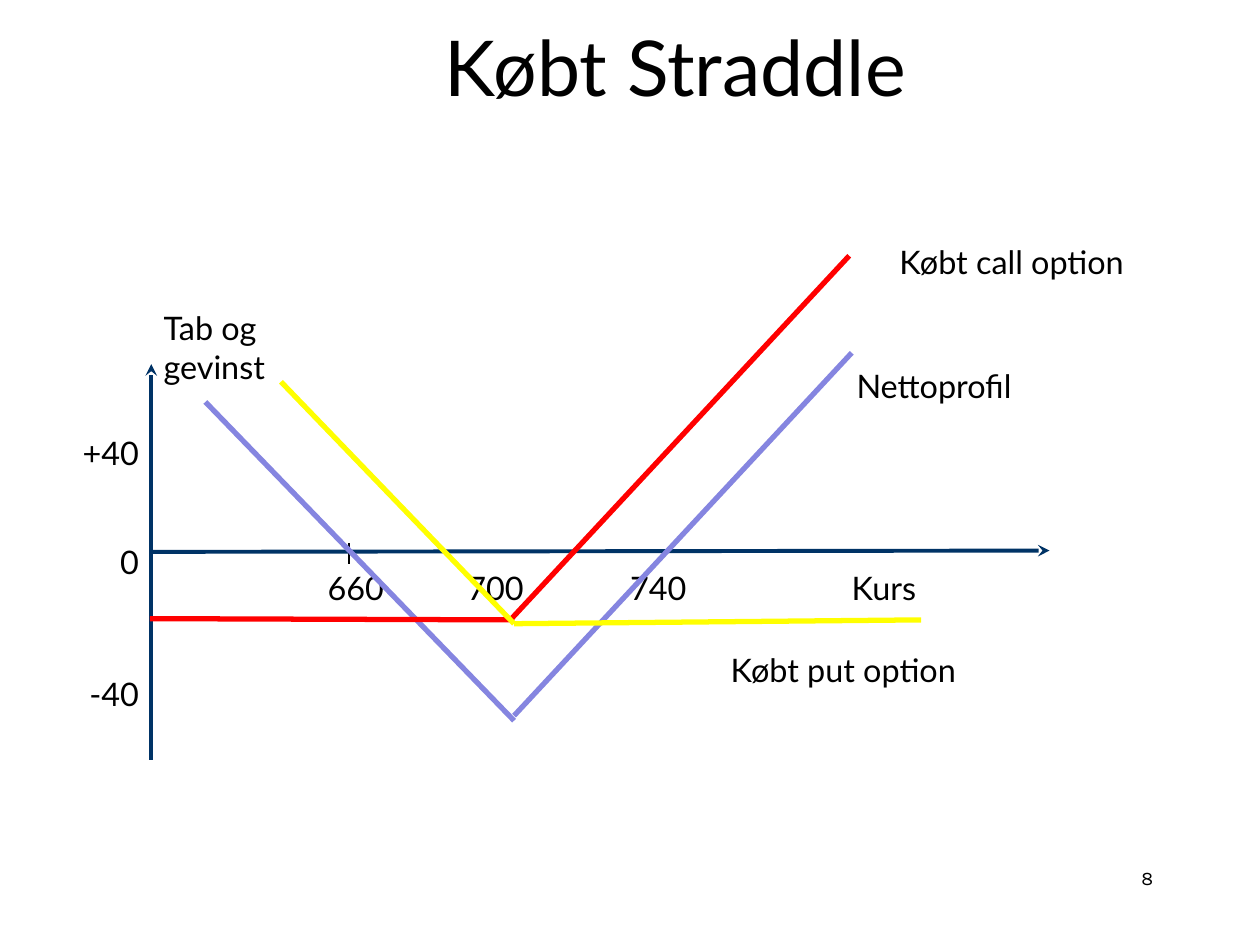
from dataclasses import dataclass

from lxml.etree import SubElement
from pptx import Presentation
from pptx.dml.color import RGBColor
from pptx.enum.shapes import MSO_CONNECTOR as CONN
from pptx.enum.text import MSO_ANCHOR as ANCHOR, MSO_AUTO_SIZE as AUTO, PP_ALIGN as ALIGN
from pptx.oxml.ns import qn
from pptx.util import Pt

EMU_PER_PX = 9144  # 100 px to the inch
BLACK, NAVY, LILAC = "000000", "003366", "8585E0"
RED, YELLOW = "FF0000", "FFFF00"


@dataclass(frozen=True)
class Line:
    start: tuple[int, int]
    end: tuple[int, int]
    color: str
    width: float = 3
    arrow: bool = False


@dataclass(frozen=True)
class Label:
    text: str
    box: tuple[int, int, int, int]
    align: ALIGN = ALIGN.LEFT
    size: float = 18.5
    font: str = "Lato"


AXES = [
    Line((120, 603), (120, 289), NAVY, 2.25, True),
    Line((120, 438), (833, 437), NAVY, 2.25, True),
]
PROFILES = [
    Line((408, 568), (676, 280), LILAC),
    Line((277, 431), (277, 448), BLACK, 0.75),
    Line((408, 572), (163, 319), LILAC),
    Line((406, 491), (674, 203), RED),
    Line((119, 491), (408, 492), RED),
    Line((408, 495), (731, 492), YELLOW),
    Line((223, 303), (408, 495), YELLOW),
]
LABELS = [
    Label("8", (717, 683, 208, 50), ALIGN.RIGHT, 11, "Karla"),
    Label("Tab og gevinst", (120, 240, 107, 32)),
    Label("Købt put option", (570, 511, 249, 32)),
    Label("Købt call option", (704, 187, 231, 32)),
    Label("Nettoprofil", (670, 286, 174, 33)),
]
Y_AXIS = Label("+40\n0\n-40", (35, 339, 85, 34), ALIGN.RIGHT)
Y_GAPS = [0, 40, 53]  # points above each value
X_AXIS = Label("660\t700\t740\tKurs", (223, 446, 562, 33))
X_INSET = 37
X_TABS = [111, 240, 416]


def px(n: int) -> int:
    return n * EMU_PER_PX


def rgb(color: str) -> RGBColor:
    return RGBColor.from_string(color)


def format_text(tf, align: ALIGN, size: float, font: str) -> None:
    for p in tf.paragraphs:
        p.alignment = align
        for r in p.runs:
            r.font.size = Pt(size)
            r.font.name = font
            r.font.color.rgb = rgb(BLACK)


def add_line(s, line: Line) -> None:
    c = s.shapes.add_connector(CONN.STRAIGHT, *map(px, line.start + line.end))
    c.line.color.rgb = rgb(line.color)
    c.line.width = Pt(line.width)
    sp_pr = c.line._get_or_add_ln().getparent()
    if line.arrow:
        SubElement(c.line._get_or_add_ln(), qn("a:tailEnd"), type="stealth")
    SubElement(sp_pr, qn("a:effectLst"))


def add_label(s, label: Label):
    tf = s.shapes.add_textbox(*map(px, label.box)).text_frame
    tf.word_wrap = True
    tf.text = label.text
    format_text(tf, label.align, label.size, label.font)
    return tf


def add_axis_values(s) -> None:
    tf = add_label(s, Y_AXIS)
    for p, gap in zip(tf.paragraphs, Y_GAPS):
        p.space_before = Pt(gap)

    tf = add_label(s, X_AXIS)
    tf.margin_left = px(X_INSET)
    tabs = SubElement(tf.paragraphs[0]._p.get_or_add_pPr(), qn("a:tabLst"))
    for pos in X_TABS:
        SubElement(tabs, qn("a:tab"), pos=str(px(pos)), algn="l")


def set_title(s, text: str) -> None:
    sp = s.shapes.title
    sp.left, sp.top, sp.width, sp.height = map(px, (107, 29, 858, 46))
    tf = sp.text_frame
    tf.text = text
    tf.auto_size = AUTO.NONE
    tf.vertical_anchor = ANCHOR.MIDDLE
    format_text(tf, ALIGN.CENTER, 44, "Lato")


def main() -> None:
    prs = Presentation()
    prs.slide_width, prs.slide_height = px(1000), px(750)
    s = prs.slides.add_slide(prs.slide_layouts[5])
    set_title(s, "Købt Straddle")
    for line in AXES:
        add_line(s, line)
    add_axis_values(s)
    for label in LABELS:
        add_label(s, label)
    for line in PROFILES:
        add_line(s, line)
    prs.save("out.pptx")


if __name__ == "__main__":
    main()
